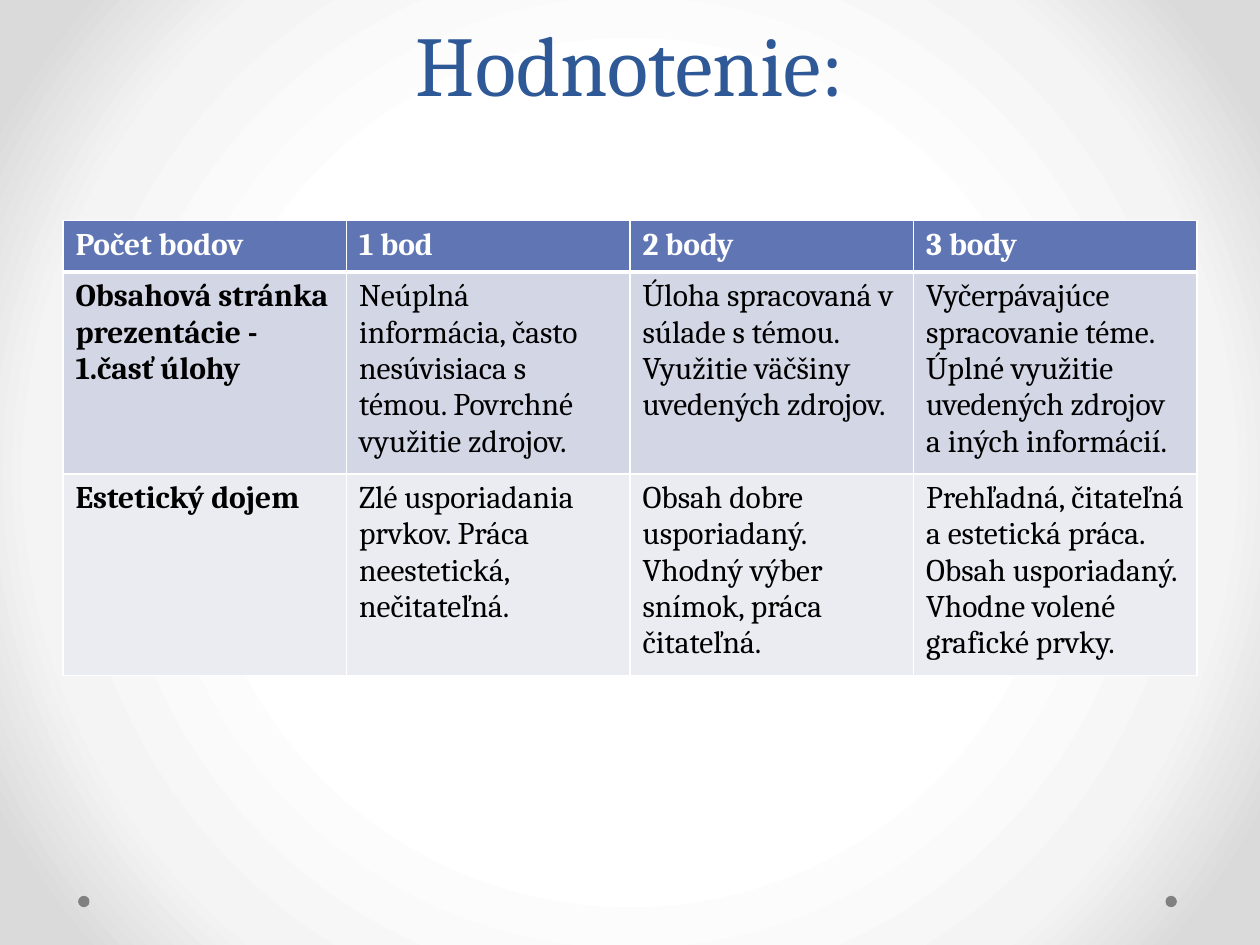
import dataclasses

import lxml.etree
import pptx
import pptx.dml.color
import pptx.enum.shapes
import pptx.enum.text
import pptx.oxml.ns
import pptx.util

Inches = pptx.util.Inches


@dataclasses.dataclass(frozen=True)
class Theme:
    font: str = "Cambria"
    title: str = "2F5897"
    head: str = "6076B4"
    bands: tuple = ("D2D6E5", "EAECF2")
    light: str = "FFFFFF"
    dark: str = "000000"
    dot: str = "808080"
    glow: tuple = ((50, "FFFFFF"), (76, "F4F4F4"), (92, "DADADA"))
    big: float = 48.6
    body: float = 18
    lead: float = 58


THEME = Theme()
ROWS = [
    ["Počet bodov", "1 bod", "2 body", "3 body"],
    [
        "Obsahová stránka prezentácie -\n1.časť úlohy",
        "Neúplná informácia, často nesúvisiaca s témou. Povrchné využitie zdrojov.",
        "Úloha spracovaná v súlade s témou. Využitie väčšiny uvedených zdrojov.",
        "Vyčerpávajúce spracovanie téme. Úplné využitie uvedených zdrojov a iných informácií.",
    ],
    [
        "Estetický dojem",
        "Zlé usporiadania prvkov. Práca neestetická, nečitateľná.",
        "Obsah dobre usporiadaný. Vhodný výber snímok, práca čitateľná.",
        "Prehľadná, čitateľná a estetická práca. Obsah usporiadaný. Vhodne volené grafické prvky.",
    ],
]


def color(code):
    return pptx.dml.color.RGBColor.from_string(code)


def add_node(parent, tag, **attrs):
    return lxml.etree.SubElement(parent, pptx.oxml.ns.qn(tag), attrs)


def style_text(frame, size, code, bold=False):
    for para in frame.paragraphs:
        for run in para.runs:
            run.font.name = THEME.font
            run.font.size = pptx.util.Pt(size)
            run.font.bold = bold
            run.font.color.rgb = color(code)


def paint_back(slide):
    slide.background.fill.gradient()
    grad = slide.element.find(".//" + pptx.oxml.ns.qn("a:gradFill"))
    for child in list(grad):
        grad.remove(child)
    stops = add_node(grad, "a:gsLst")
    for place, code in THEME.glow:
        stop = add_node(stops, "a:gs", pos=str(place * 1000))
        add_node(stop, "a:srgbClr", val=code)
    focus = add_node(grad, "a:path", path="circle")
    add_node(focus, "a:fillToRect", l="50000", t="50000", r="50000", b="50000")


def add_dots(slide, left, top, width, size):
    for x in (left + width - size, left):
        dot = slide.shapes.add_shape(
            pptx.enum.shapes.MSO_SHAPE.OVAL,
            Inches(x), Inches(top), Inches(size), Inches(size),
        )
        dot.shadow.inherit = False
        dot.fill.solid()
        dot.fill.fore_color.rgb = color(THEME.dot)
        dot.line.fill.background()


def add_title(slide, left, top, width, height):
    box = slide.shapes.add_textbox(
        Inches(left), Inches(top), Inches(width), Inches(height)
    )
    frame = box.text_frame
    frame.word_wrap = True
    frame.vertical_anchor = pptx.enum.text.MSO_ANCHOR.BOTTOM
    frame.margin_bottom = Inches(0.85)
    frame.text = "Hodnotenie:"
    para = frame.paragraphs[0]
    para.alignment = pptx.enum.text.PP_ALIGN.CENTER
    para.line_spacing = pptx.util.Pt(THEME.lead)
    style_text(frame, THEME.big, THEME.title)


def add_edges(cell, above, below):
    props = cell._tc.get_or_add_tcPr()
    for side, width in (("L", 1), ("R", 1), ("T", above), ("B", below)):
        line = add_node(props, "a:ln" + side, w=str(pptx.util.Pt(width)))
        add_node(add_node(line, "a:solidFill"), "a:srgbClr", val=THEME.light)


def add_grid(slide, left, top, width, heights):
    grid = slide.shapes.add_table(
        len(ROWS), len(ROWS[0]),
        Inches(left), Inches(top), Inches(width), Inches(sum(heights)),
    ).table
    for i, texts in enumerate(ROWS):
        head = i == 0
        grid.rows[i].height = Inches(heights[i])
        for j, text in enumerate(texts):
            cell = grid.cell(i, j)
            add_edges(cell, 3 if i == 1 else 1, 3 if head else 1)
            cell.fill.solid()
            band = THEME.head if head else THEME.bands[(i - 1) % 2]
            cell.fill.fore_color.rgb = color(band)
            cell.text_frame.text = text
            ink = THEME.light if head else THEME.dark
            style_text(cell.text_frame, THEME.body, ink, head or j == 0)


def main():
    deck = pptx.Presentation()
    deck.slide_width, deck.slide_height = Inches(10), Inches(7.5)
    slide = deck.slides.add_slide(deck.slide_layouts[6])
    paint_back(slide)
    add_dots(slide, 0.62, 7.11, 8.72, 0.09)
    add_title(slide, 0.5, 0, 9, 1.75)
    add_grid(slide, 0.5, 1.75, 9, (0.41, 1.54, 1.54))
    deck.save("out.pptx")


if __name__ == "__main__":
    main()
